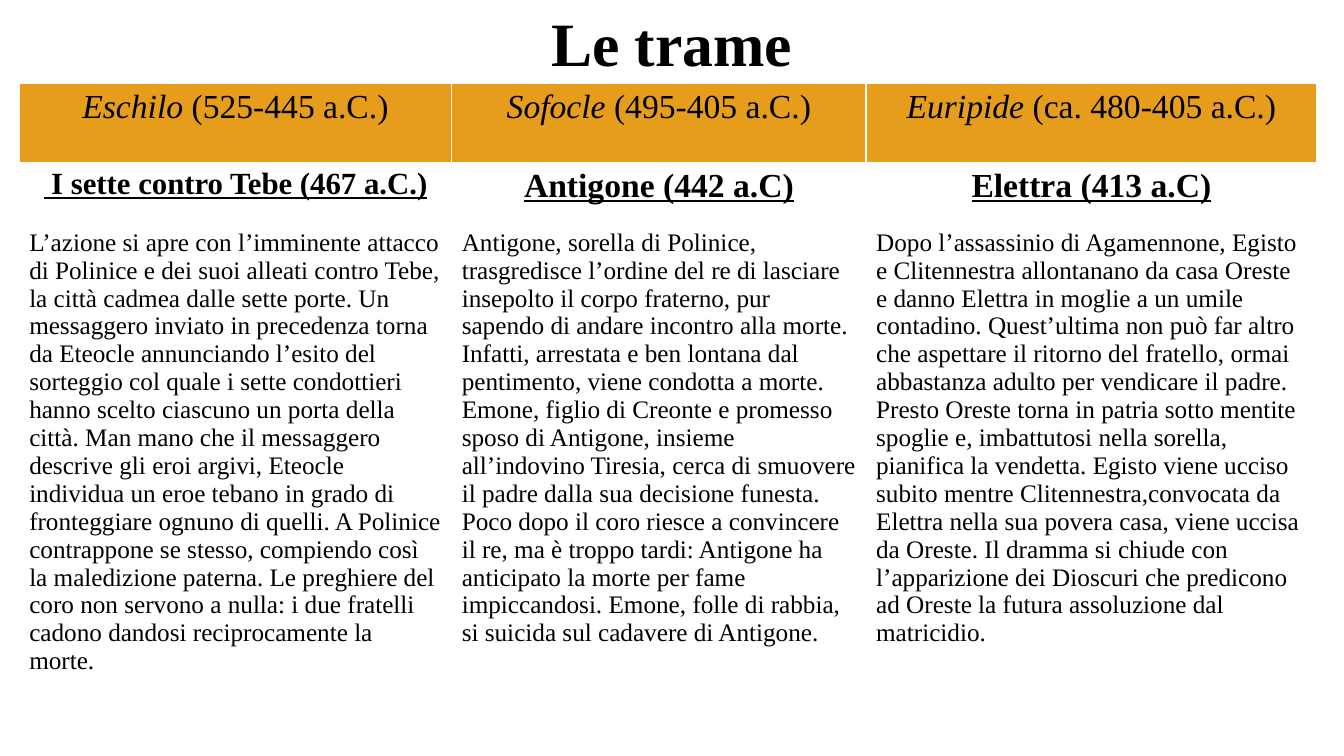
from lxml.etree import SubElement
from pptx import Presentation
from pptx.dml.color import RGBColor
from pptx.enum.text import MSO_AUTO_SIZE as AutoSize, PP_ALIGN as Align
from pptx.oxml.ns import qn
from pptx.util import Inches, Pt

FONT = "Times New Roman"
BLACK, WHITE, ORANGE = "000000", "FFFFFF", "E59D1B"

# Content: author, dates, play, size of the play's title, plot
TITLE = "Le trame"
TRAGEDIES = [
    ("Eschilo", " (525-445 a.C.)", " I sette contro Tebe (467 a.C.)", 22,
     "L’azione si apre con l’imminente attacco di Polinice e dei suoi alleati "
     "contro Tebe, la città cadmea dalle sette porte. Un messaggero inviato in "
     "precedenza torna da Eteocle annunciando l’esito del sorteggio col quale i "
     "sette condottieri hanno scelto ciascuno un porta della città. Man mano che "
     "il messaggero descrive gli eroi argivi, Eteocle individua un eroe tebano in "
     "grado di fronteggiare ognuno di quelli. A Polinice contrappone se stesso, "
     "compiendo così la maledizione paterna. Le preghiere del coro non servono a "
     "nulla: i due fratelli cadono dandosi reciprocamente la morte."),
    ("Sofocle", " (495-405 a.C.)", "Antigone (442 a.C)", 24,
     "Antigone, sorella di Polinice, trasgredisce l’ordine del re di lasciare "
     "insepolto il corpo fraterno, pur sapendo di andare incontro alla morte. "
     "Infatti, arrestata e ben lontana dal pentimento, viene condotta a morte. "
     "Emone, figlio di Creonte e promesso sposo di Antigone, insieme all’indovino "
     "Tiresia, cerca di smuovere il padre dalla sua decisione funesta. Poco dopo "
     "il coro riesce a convincere il re, ma è troppo tardi: Antigone ha anticipato "
     "la morte per fame impiccandosi. Emone, folle di rabbia, si suicida sul "
     "cadavere di Antigone."),
    ("Euripide ", "(ca. 480-405 a.C.)", "Elettra (413 a.C)", 24,
     "Dopo l’assassinio di Agamennone, Egisto e Clitennestra allontanano da casa "
     "Oreste e danno Elettra in moglie a un umile contadino. Quest’ultima non può "
     "far altro che aspettare il ritorno del fratello, ormai abbastanza adulto per "
     "vendicare il padre. Presto Oreste torna in patria sotto mentite spoglie e, "
     "imbattutosi nella sorella, pianifica la vendetta. Egisto viene ucciso subito "
     "mentre Clitennestra,convocata da Elettra nella sua povera casa, viene uccisa "
     "da Oreste. Il dramma si chiude con l’apparizione dei Dioscuri che predicono "
     "ad Oreste la futura assoluzione dal matricidio."),
]
COLUMN_WIDTHS = [4.29, 4.11, 4.47]
ROW_HEIGHTS = [0.78, 0.61, 4.9]


def color(value):
    return RGBColor.from_string(value)


def add_text(para, text, size=18, bold=False, italic=False, underline=False,
             align=Align.LEFT):
    para.alignment = align
    span = para.add_run()
    span.text = text
    font = span.font
    font.name, font.size = FONT, Pt(size)
    font.bold, font.italic, font.underline = bold, italic, underline
    font.color.rgb = color(BLACK)


def style_cell(cell, fill):
    properties = cell._tc.get_or_add_tcPr()
    for side in ("lnL", "lnR", "lnT", "lnB"):
        line = SubElement(properties, qn("a:" + side), w=str(Pt(1)))
        paint = SubElement(line, qn("a:solidFill"))
        SubElement(paint, qn("a:srgbClr"), val=WHITE)
    cell.fill.solid()
    cell.fill.fore_color.rgb = color(fill)


deck = Presentation()
deck.slide_width, deck.slide_height = Inches(13.33), Inches(7.5)
page = deck.slides.add_slide(deck.slide_layouts[6])

# Title
box = page.shapes.add_textbox(0, 0, deck.slide_width, Inches(0.84))
box.text_frame.word_wrap = True
box.text_frame.auto_size = AutoSize.SHAPE_TO_FIT_TEXT
add_text(box.text_frame.paragraphs[0], TITLE, size=44, bold=True, align=Align.CENTER)

# Table: one column for each tragedy
table = page.shapes.add_table(
    len(ROW_HEIGHTS), len(TRAGEDIES), Inches(0.19), Inches(0.83),
    Inches(sum(COLUMN_WIDTHS)), Inches(sum(ROW_HEIGHTS))).table
for row, height in zip(table.rows, ROW_HEIGHTS):
    row.height = Inches(height)
for column, width in zip(table.columns, COLUMN_WIDTHS):
    column.width = Inches(width)

for index, (author, dates, play, play_size, plot) in enumerate(TRAGEDIES):
    cells = [table.cell(row, index) for row in range(len(ROW_HEIGHTS))]
    for cell, fill in zip(cells, (ORANGE, WHITE, WHITE)):
        style_cell(cell, fill)
    author_para, play_para, plot_para = [cell.text_frame.paragraphs[0] for cell in cells]
    add_text(author_para, author, size=24, italic=True, align=Align.CENTER)
    add_text(author_para, dates, size=24, align=Align.CENTER)
    add_text(play_para, play, size=play_size, bold=True, underline=True,
             align=Align.CENTER)
    add_text(plot_para, plot)

deck.save("out.pptx")
